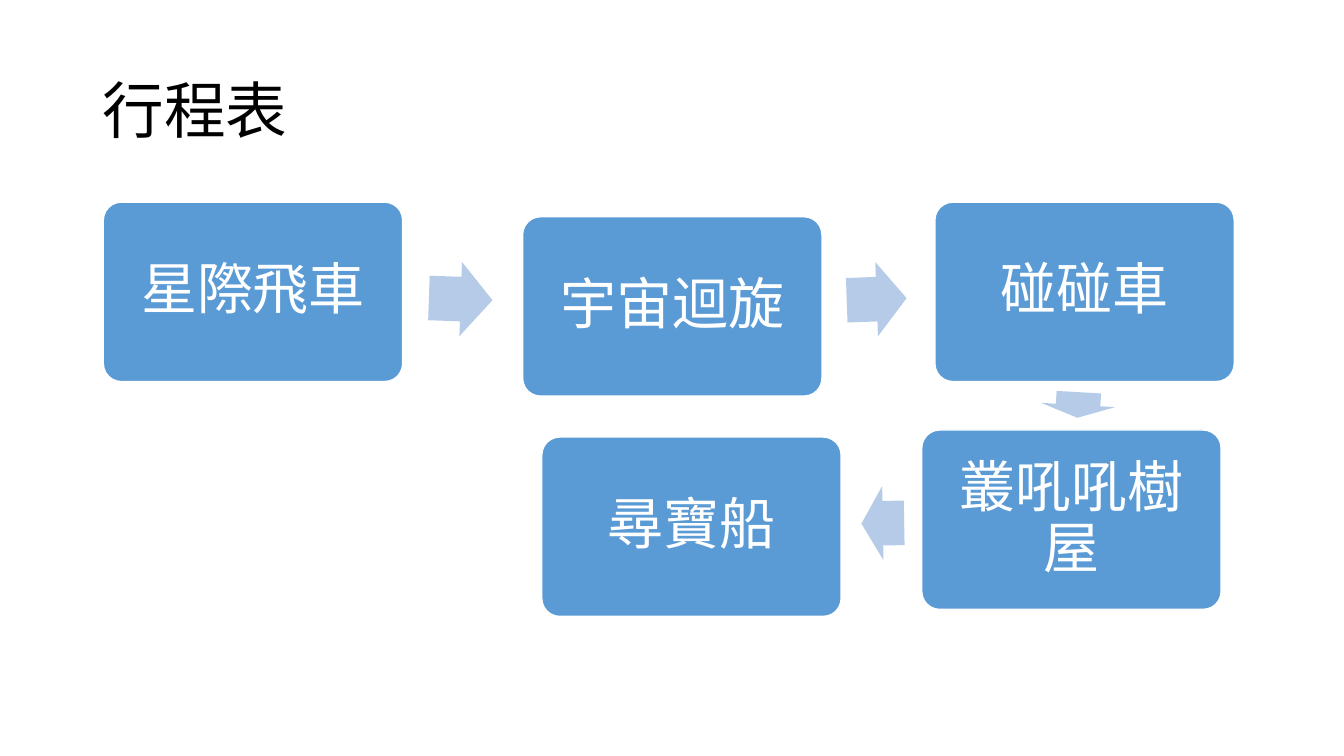
from itertools import pairwise
from math import atan2, cos, degrees, hypot, sin

from pptx import Presentation
from pptx.dml.color import RGBColor
from pptx.enum.shapes import MSO_SHAPE
from pptx.enum.text import MSO_ANCHOR, PP_ALIGN
from pptx.util import Pt

ROUNDED = MSO_SHAPE.ROUNDED_RECTANGLE
ARROW = MSO_SHAPE.RIGHT_ARROW
MIDDLE = MSO_ANCHOR.MIDDLE
LEFT = PP_ALIGN.LEFT
CENTER = PP_ALIGN.CENTER

COLORS = {"step": "5B9BD5", "arrow": "B5CBE7", "white": "FFFFFF", "black": "000000"}
FONT = "Calibri"
TITLE_ONLY = 5
STEP_WIDTH, STEP_HEIGHT = 213.84, 128.16
STEP_INSET = 12
ARROW_HEIGHT = 53.04
ARROW_SHARE = 0.53
ARROW_SETBACK = 0.016
STEPS = [
    ("星際飛車", 0, 0),
    ("宇宙迴旋", 299.52, 10.4),
    ("碰碰車", 594, 0),
    ("叢吼吼樹屋", 584.64, 162.72),
    ("尋寶船", 313.2, 167.76),
]


def color(name):
    """Return the named palette colour."""
    return RGBColor.from_string(COLORS[name])


def write_text(shape, text, size, color_name, alignment):
    """Write one middle-anchored paragraph into a shape."""
    frame = shape.text_frame
    frame.word_wrap = True
    frame.vertical_anchor = MIDDLE
    paragraph = frame.paragraphs[0]
    paragraph.alignment = alignment
    paragraph.line_spacing = 0.9
    run = paragraph.add_run()
    run.text = text
    run.font.name = FONT
    run.font.size = Pt(size)
    run.font.color.rgb = color(color_name)


def add_title(slide, text, left, top, width, height):
    """Place and format the title placeholder."""
    title = slide.shapes.title
    title.left, title.top = Pt(left), Pt(top)
    title.width, title.height = Pt(width), Pt(height)
    write_text(title, text, 44, "black", LEFT)


def add_step(slide, text, left, top):
    """Draw one rounded step box with its label."""
    step = slide.shapes.add_shape(
        ROUNDED, Pt(left), Pt(top), Pt(STEP_WIDTH), Pt(STEP_HEIGHT))
    step.shadow.inherit = False
    step.adjustments[0] = 0.1
    step.fill.solid()
    step.fill.fore_color.rgb = color("step")
    step.line.color.rgb = color("white")
    step.line.width = Pt(1)
    frame = step.text_frame
    frame.margin_left = frame.margin_right = Pt(STEP_INSET)
    frame.margin_top = frame.margin_bottom = Pt(STEP_INSET)
    write_text(step, text, 40, "white", CENTER)


def add_step_arrow(slide, start, end):
    """Draw a block arrow in the gap between two step centres."""
    across, down = end[0] - start[0], end[1] - start[1]
    angle = atan2(down, across)
    gap = max(abs(across) - STEP_WIDTH, abs(down) - STEP_HEIGHT)
    length = gap * ARROW_SHARE
    middle = hypot(across, down) / 2 - gap * ARROW_SETBACK
    center_x = start[0] + middle * cos(angle)
    center_y = start[1] + middle * sin(angle)
    arrow = slide.shapes.add_shape(
        ARROW, Pt(center_x - length / 2), Pt(center_y - ARROW_HEIGHT / 2),
        Pt(length), Pt(ARROW_HEIGHT))
    arrow.shadow.inherit = False
    arrow.adjustments[0] = 0.6
    arrow.adjustments[1] = 0.5
    arrow.rotation = degrees(angle) % 360
    arrow.fill.solid()
    arrow.fill.fore_color.rgb = color("arrow")
    arrow.line.fill.background()


def add_itinerary(slide, left, top):
    """Draw the steps and the arrows that lead from each to the next."""
    centers = []
    for text, across, down in STEPS:
        add_step(slide, text, left + across, top + down)
        centers.append((left + across + STEP_WIDTH / 2, top + down + STEP_HEIGHT / 2))
    for start, end in pairwise(centers):
        add_step_arrow(slide, start, end)


def main():
    """Build the itinerary slide and save it."""
    presentation = Presentation()
    presentation.slide_width, presentation.slide_height = Pt(960), Pt(540)
    slide = presentation.slides.add_slide(presentation.slide_layouts[TITLE_ONLY])
    add_title(slide, "行程表", 66, 28.75, 828, 104.4)
    add_itinerary(slide, 73.8, 144.4)
    presentation.save("out.pptx")


if __name__ == "__main__":
    main()
